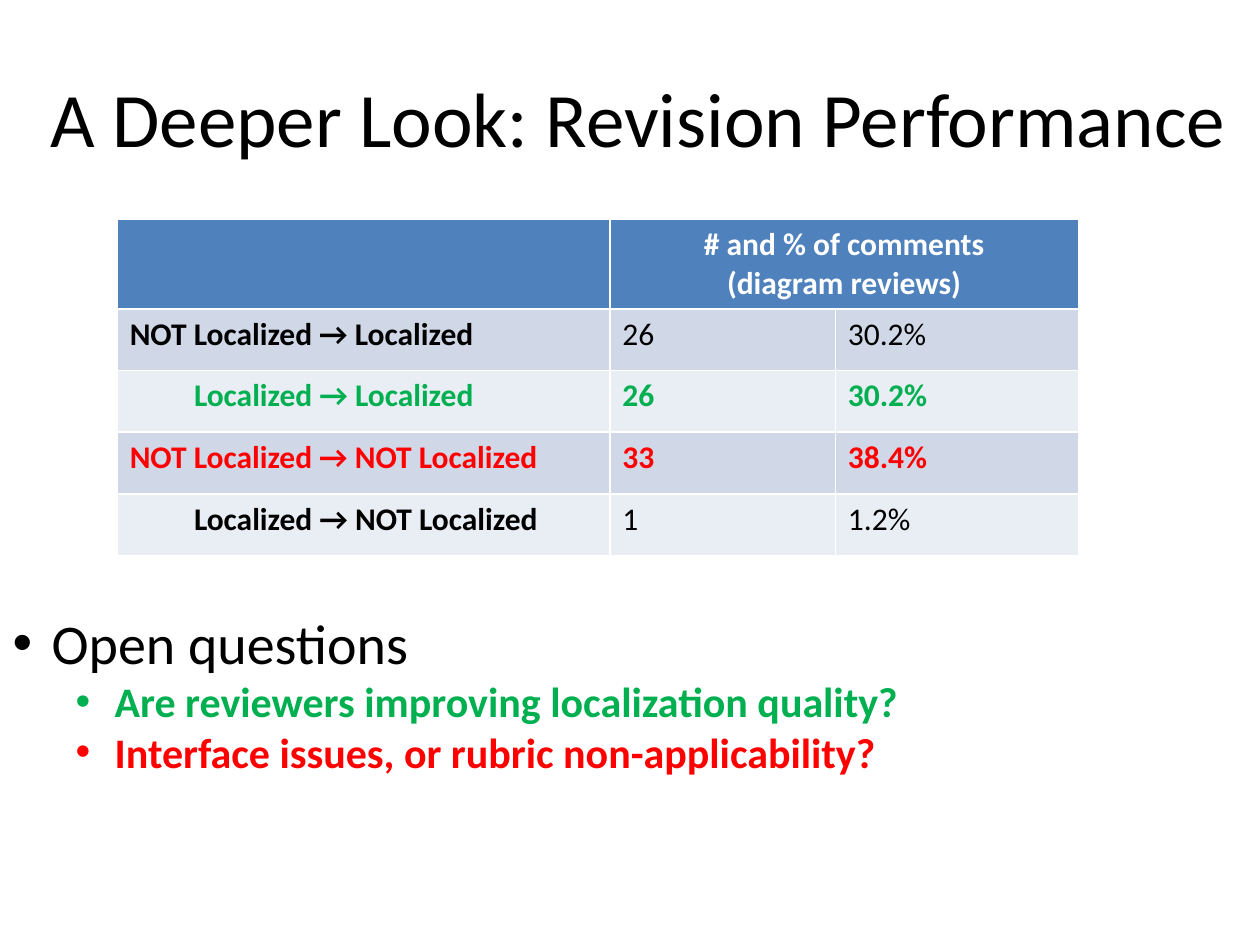
from lxml.etree import SubElement
from pptx import Presentation
from pptx.dml.color import RGBColor
from pptx.enum.text import MSO_ANCHOR, MSO_AUTO_SIZE, PP_ALIGN
from pptx.oxml.ns import qn
from pptx.util import Inches, Pt

COLORS = {
    "black": "000000", "white": "FFFFFF", "green": "00B050", "red": "FF0000",
    "head": "4F81BD", "odd": "D0D8E8", "even": "E9EDF4",
}
FONT = "Calibri"
TITLE = "A Deeper Look: Revision Performance"
HEAD = ["# and % of comments", "(diagram reviews)"]
# label, count, share, colour, bold values, label indent
ROWS = [
    ("NOT Localized → Localized", "26", "30.2%", "black", False, 0),
    ("Localized → Localized", "26", "30.2%", "green", True, 0.51),
    ("NOT Localized → NOT Localized", "33", "38.4%", "red", True, 0),
    ("Localized → NOT Localized", "1", "1.2%", "black", False, 0.51),
]
# text, level, size, colour, bold
POINTS = [
    ("Open questions", 0, 32, "black", False),
    ("Are reviewers improving localization quality?", 1, 24, "green", True),
    ("Interface issues, or rubric non-applicability?", 1, 24, "red", True),
]
COLS = [3.91, 1.79, 1.93]
HEAD_H, ROW_H = 0.68, 0.49
HANG, STEP = 0.31, 0.5


def rgb(name):
    return RGBColor.from_string(COLORS[name])


def style(para, size, color, bold=False):
    font = para.font
    font.name, font.size, font.bold = FONT, Pt(size), bold
    font.color.rgb = rgb(color)


def place(shape, *box):
    shape.left, shape.top, shape.width, shape.height = map(Inches, box)


def paint(cell, color):
    cell.fill.solid()
    cell.fill.fore_color.rgb = rgb(color)


def add_bullet(para, level):
    props = para._p.get_or_add_pPr()
    props.set("marL", str(Inches(HANG + STEP * level)))
    props.set("indent", str(-Inches(HANG)))
    SubElement(props, qn("a:buFont"), typeface="Arial")
    SubElement(props, qn("a:buChar"), char="•")


def fill_title(title):
    place(title, 0.14, 0.3, 9.86, 1.25)
    title.text_frame.text = TITLE
    style(title.text_frame.paragraphs[0], 44, "black")


def build_table(slide):
    height = HEAD_H + ROW_H * len(ROWS)
    frame = slide.shapes.add_table(
        len(ROWS) + 1, len(COLS),
        *map(Inches, (0.93, 1.74, sum(COLS), height)))
    table = frame.table
    for col, width in zip(table.columns, COLS):
        col.width = Inches(width)
    for i, row in enumerate(table.rows):
        row.height = Inches(ROW_H if i else HEAD_H)

    for cell in table.rows[0].cells:
        paint(cell, "head")
    top = table.cell(0, 1)
    top.merge(table.cell(0, 2))
    top.text = "\n".join(HEAD)
    for para in top.text_frame.paragraphs:
        para.alignment = PP_ALIGN.CENTER
        style(para, 18, "white", True)

    for r, (*texts, color, bold, indent) in enumerate(ROWS, 1):
        for c, text in enumerate(texts):
            cell = table.cell(r, c)
            paint(cell, "odd" if r % 2 else "even")
            cell.text = text
            style(cell.text_frame.paragraphs[0], 18, color, bold or c == 0)
        table.cell(r, 0).margin_left = Inches(0.1 + indent)


def fill_body(body):
    place(body, 0, 4.78, 10, 1.45)
    frame = body.text_frame
    frame.auto_size = MSO_AUTO_SIZE.NONE
    frame.vertical_anchor = MSO_ANCHOR.TOP
    frame.text = "\n".join(point[0] for point in POINTS)
    for para, (_, level, size, color, bold) in zip(frame.paragraphs, POINTS):
        para.level = level
        para.space_before = Pt(0)
        style(para, size, color, bold)
        add_bullet(para, level)


def main():
    deck = Presentation()
    deck.slide_width, deck.slide_height = Inches(10), Inches(7.5)
    slide = deck.slides.add_slide(deck.slide_layouts[1])
    fill_title(slide.shapes.title)
    build_table(slide)
    fill_body(slide.placeholders[1])
    deck.save("out.pptx")


if __name__ == "__main__":
    main()
